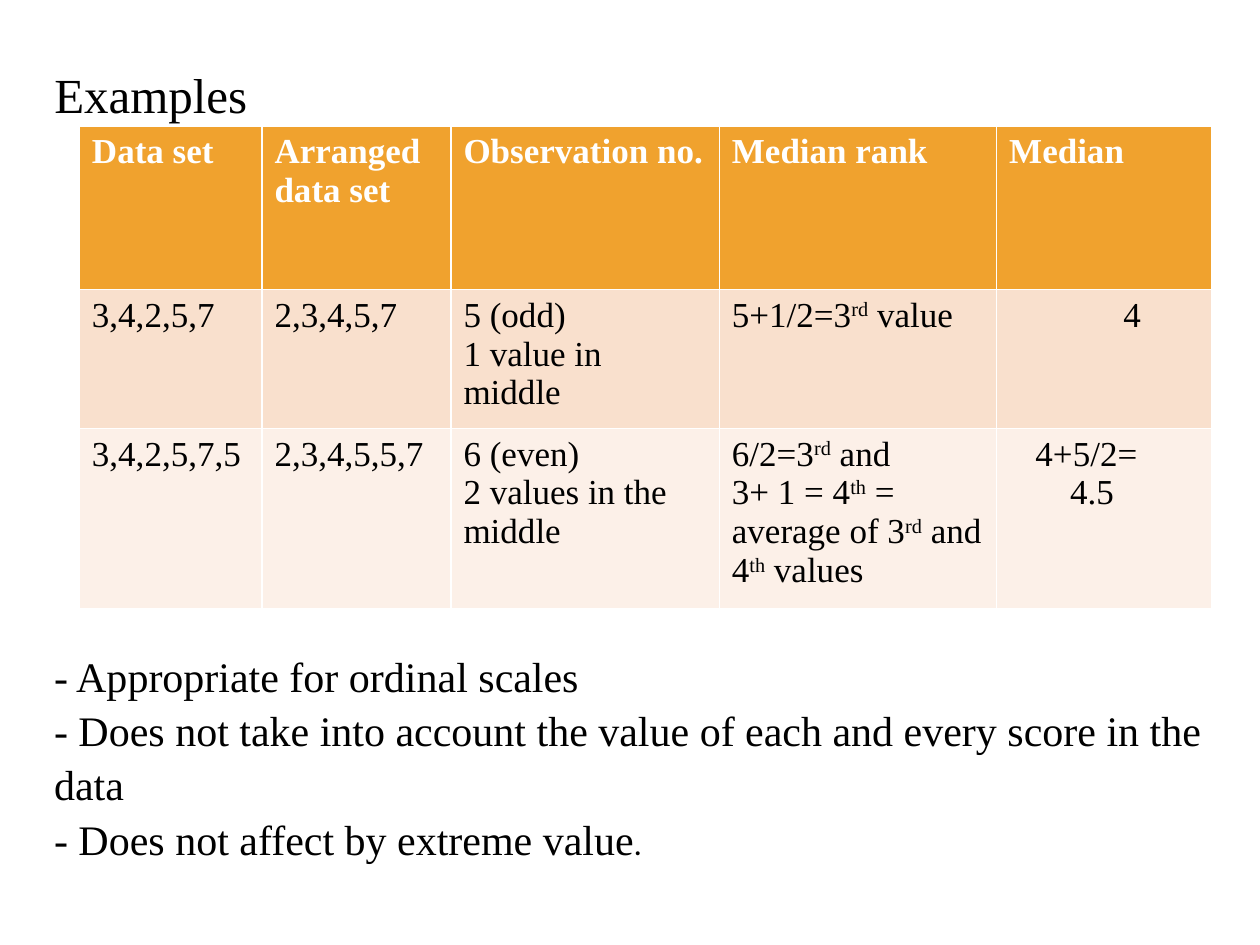
from pptx import Presentation
from pptx.dml.color import RGBColor
from pptx.enum.text import MSO_ANCHOR as Anchor, PP_ALIGN as Align
from pptx.util import Cm, Pt

SERIF = "Times New Roman"
BLACK, WHITE = "000000", "FFFFFF"
ROW_FILLS = ["F0A22E", "F9E0CD", "FCF0E8"]
COLUMN_WIDTHS = [3.68, 3.81, 5.41, 5.59, 4.34]
ROW_HEIGHTS = [3.3, 2.8, 3.63]
ROWS = [
    ["Data set", "Arranged data set", "Observation no.", "Median rank", "Median"],
    ["3,4,2,5,7", "2,3,4,5,7", "5 (odd)\n1 value in middle", "5+1/2=3^rd^ value", "4"],
    ["3,4,2,5,7,5", "2,3,4,5,5,7", "6 (even)\n2 values in the middle",
     "6/2=3^rd^ and\n3+ 1 = 4^th^ = average of 3^rd^ and 4^th^ values",
     "4+5/2=\n4.5"],
]
MEDIAN_INDENTS = {1: [2.3], 2: [0.53, 1.23]}
NOTES = [
    "- Appropriate for ordinal scales",
    "- Does not take into account the value of each and every score in the data",
    "- Does not affect by extreme value",
]


def color(value):
    return RGBColor.from_string(value)


def format_run(run, size, fill=BLACK, bold=False, name=SERIF):
    run.font.name = name
    run.font.size = Pt(size)
    run.font.bold = bold
    run.font.color.rgb = color(fill)


def format_text(text_frame, size):
    text_frame.word_wrap = True
    text_frame.vertical_anchor = Anchor.TOP
    for paragraph in text_frame.paragraphs:
        paragraph.alignment = Align.LEFT
        paragraph.line_spacing = 1.08
        for run in paragraph.runs:
            format_run(run, size)


def place(shape, left, top, width, height):
    shape.left, shape.top = Cm(left), Cm(top)
    shape.width, shape.height = Cm(width), Cm(height)


def add_title(slide):
    title = slide.shapes.title
    place(title, 0.84, 1.07, 23.7, 1.45)
    title.text_frame.text = "Examples"
    format_text(title.text_frame, 28)


def fill_cell(cell, text, fill, is_header):
    cell.fill.solid()
    cell.fill.fore_color.rgb = color(fill)
    cell.text_frame.text = text.replace("^", "")
    for paragraph, line in zip(cell.text_frame.paragraphs, text.split("\n")):
        paragraph.text = ""
        for index, part in enumerate(line.split("^")):
            run = paragraph.add_run()
            run.text = part
            format_run(run, 20, WHITE if is_header else BLACK, is_header)
            if index % 2:
                run.font._element.set("baseline", "30000")


def indent_paragraphs(cell, indents):
    for paragraph, indent in zip(cell.text_frame.paragraphs, indents):
        paragraph._p.get_or_add_pPr().set("marL", str(Cm(indent)))


def add_examples_table(slide):
    frame = slide.shapes.add_table(
        len(ROWS), len(COLUMN_WIDTHS), Cm(1.6), Cm(2.54),
        Cm(sum(COLUMN_WIDTHS)), Cm(sum(ROW_HEIGHTS)))
    table = frame.table
    for column, width in zip(table.columns, COLUMN_WIDTHS):
        column.width = Cm(width)
    for row_index, (texts, height, fill) in enumerate(zip(ROWS, ROW_HEIGHTS, ROW_FILLS)):
        row = table.rows[row_index]
        row.height = Cm(height)
        for cell, text in zip(row.cells, texts):
            fill_cell(cell, text, fill, row_index == 0)
    for row_index, indents in MEDIAN_INDENTS.items():
        indent_paragraphs(table.cell(row_index, 4), indents)


def add_notes_text(slide):
    box = slide.shapes.add_textbox(Cm(0.84), Cm(12.9), Cm(23.7), Cm(4.37))
    box.text_frame.text = "\n".join(NOTES)
    format_text(box.text_frame, 24)
    full_stop = box.text_frame.paragraphs[-1].add_run()
    full_stop.text = "."
    format_run(full_stop, 18, name="Lato")


def main():
    presentation = Presentation()
    presentation.slide_width, presentation.slide_height = Cm(25.4), Cm(19.05)
    slide = presentation.slides.add_slide(presentation.slide_layouts[5])
    add_title(slide)
    add_examples_table(slide)
    add_notes_text(slide)
    presentation.save("out.pptx")


if __name__ == "__main__":
    main()
